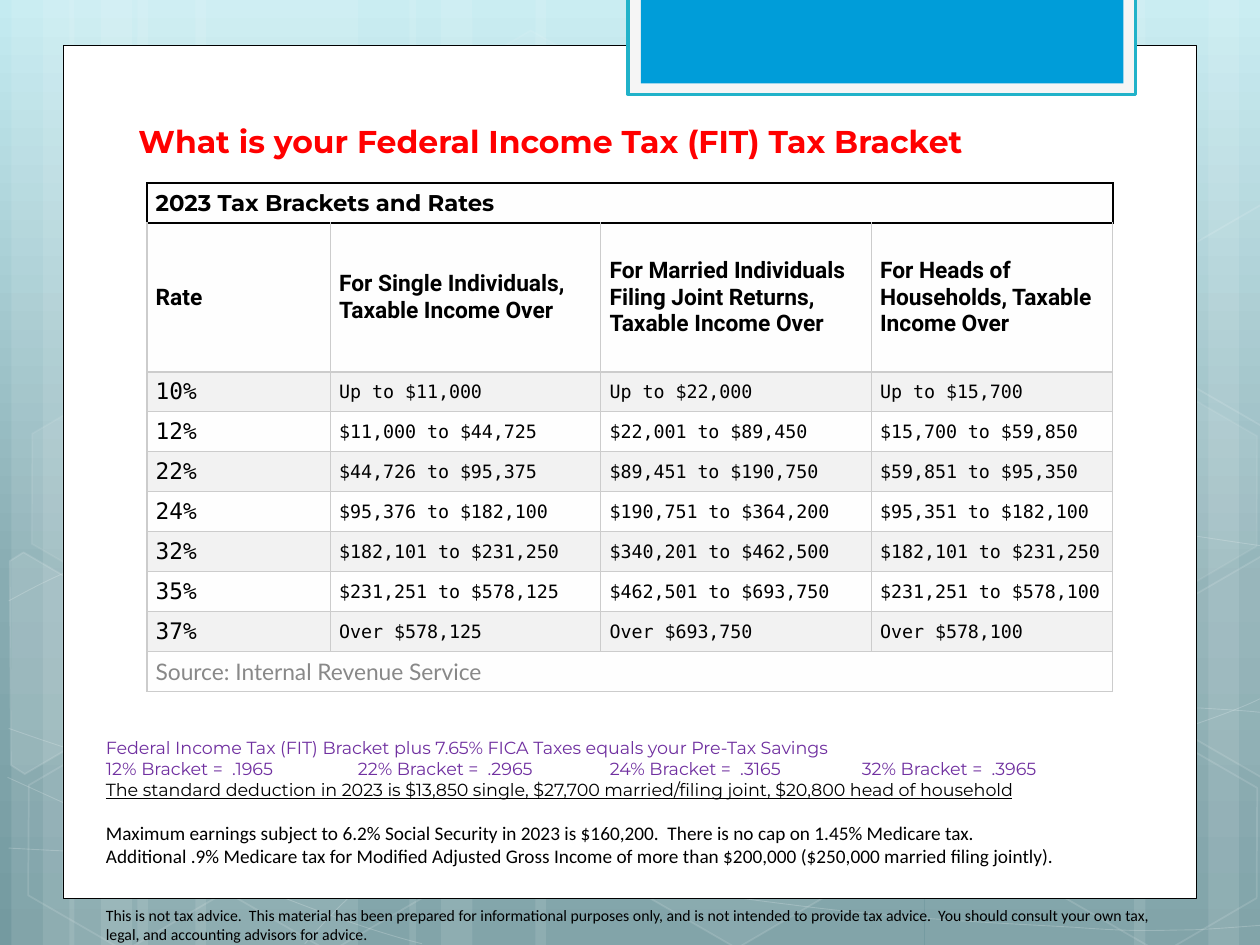
import math
from dataclasses import dataclass

from lxml import etree
from pptx import Presentation
from pptx.dml.color import RGBColor
from pptx.enum import shapes, text
from pptx.oxml import ns
from pptx.util import Pt


@dataclass(frozen=True)
class Theme:
    """Colours, fonts and type sizes of the slide."""
    white: str = "FFFFFF"
    black: str = "000000"
    red: str = "FF0000"
    purple: str = "7030A0"
    grey: str = "888888"
    rule: str = "CCCCCC"
    plain: str = "FEFEFE"
    band: str = "F2F2F2"
    tab_fill: str = "F5F5F5"
    tab_edge: str = "21B2C9"
    accent: str = "009DD9"
    backdrop: tuple = ((0, "C4EBF1"), (62, "88ACB2"), (100, "749AA0"))
    display: str = "Montserrat"
    body: str = "Calibri"
    heading: str = "Roboto"
    figures: str = "DejaVu Sans Mono"
    credit: str = "Lato"
    title_size: float = 18
    table_size: float = 13
    amount_size: float = 10.5
    note_size: float = 10
    limit_size: float = 11
    disclaimer_size: float = 9


THEME = Theme()

STRIPES = [(78.5, 126), (6.5, 36), (24.5, 60), (111.6, 126), (39.6, 36), (57.6, 60),
           (528.5, 126), (690.5, 36), (648, 60), (306, 222), (234, 36), (252, 60)]

CURVES = [
    [(5, 484.6), (43.9, 486.7), (82.8, 488.9), (136.8, 488.2), (190.8, 487.4), (257.8, 486),
     (329.8, 478.8), (401.8, 471.6), (504, 457.9), (570.2, 444.2), (635.8, 430.6),
     (703.4, 409), (725, 396.7)],
    [(5, 343.4), (25.9, 331.9), (46.8, 321.1), (87.1, 310.3), (128.2, 299.5), (186.5, 283.7),
     (249.8, 278.6), (313.9, 273.6), (391.7, 272.9), (470.9, 278.6), (550.1, 284.4),
     (681.8, 306.7), (725, 312.5)],
    [(4.3, 444.2), (91.4, 483.8), (177.8, 523.4), (241.2, 539.3)],
    [(5, 416.2), (27.4, 424.1), (50.4, 432), (92.2, 443.5), (133.9, 454.3), (196.6, 472.3),
     (257, 484.6), (316.8, 496.8), (392.4, 509.8), (452.2, 517), (511.9, 524.9),
     (576, 527.8), (614.2, 529.9), (652.3, 532.8), (661.7, 531.4), (680.4, 531.4),
     (699.1, 530.6), (712.1, 529.2), (725, 528.5)],
    [(174.2, 539.3), (187.2, 524.9), (200.2, 510.5), (217.4, 497.5), (234.7, 483.8),
     (259.2, 470.2), (279.4, 460.1), (299.5, 450), (311.8, 445.7), (337.7, 438.5),
     (364.3, 431.3), (412.6, 421.2), (437.8, 416.2), (463.7, 411.1), (467.3, 411.1),
     (489.6, 409.7), (511.9, 407.5), (547.2, 405.4), (571.7, 404.6), (596.9, 403.9),
     (637.9, 404.6), (637.9, 404.6), (654, 404.6), (670, 404.6), (686.2, 404.6),
     (699.1, 405.4), (711.4, 406.1), (717.8, 406.8), (724.3, 407.5), (722.2, 406.8),
     (724.3, 407.5)]]

HEXAGONS = [(240.5, 26, 4, 8), (357.8, 424, 6, 12), (8, 425.5, 0, 12), (10, 224.6, 7, 8),
            (125.3, 426, 0, 12), (542.2, 326, 10, 12), (600.5, 427, 0, 12), (600.5, 226, 7, 8)]

LEFT_CUT = [(5.8, 320.4), (13.7, 315.4), (69.1, 347.8), (68.4, 410.4), (14.4, 442.1), (6.5, 437)]
RIGHT_CUT = [(666.7, 349.2), (721.4, 317.5), (726.5, 321.1), (726.5, 441.4), (721.4, 444.2),
             (666.7, 412.6)]
UPPER_CUT = [(x, y - 200.9) for x, y in RIGHT_CUT]
CUT_HEXAGONS = [(LEFT_CUT, (25.9, 385.9), 10), (RIGHT_CUT, (709.2, 374.4), 4),
                (UPPER_CUT, (709.2, 173.5), 0)]

HEADINGS = ["Rate", "For Single Individuals, Taxable Income Over",
            "For Married Individuals Filing Joint Returns, Taxable Income Over",
            "For Heads of Households, Taxable Income Over"]
BRACKETS = [
    ("10%", "Up to $11,000", "Up to $22,000", "Up to $15,700"),
    ("12%", "$11,000 to $44,725", "$22,001 to $89,450", "$15,700 to $59,850"),
    ("22%", "$44,726 to $95,375", "$89,451 to $190,750", "$59,851 to $95,350"),
    ("24%", "$95,376 to $182,100", "$190,751 to $364,200", "$95,351 to $182,100"),
    ("32%", "$182,101 to $231,250", "$340,201 to $462,500", "$182,101 to $231,250"),
    ("35%", "$231,251 to $578,125", "$462,501 to $693,750", "$231,251 to $578,100"),
    ("37%", "Over $578,125", "Over $693,750", "Over $578,100")]

NOTES = [
    ("Federal Income Tax (FIT) Bracket plus 7.65% FICA Taxes equals your Pre-Tax Savings",
     THEME.display, THEME.note_size, THEME.purple, False, 0),
    ("12% Bracket =  .1965\t22% Bracket =  .2965\t24% Bracket =  .3165\t32% Bracket =  .3965",
     THEME.display, THEME.note_size, THEME.purple, False, 0),
    ("The standard deduction in 2023 is $13,850 single, $27,700 married/filing joint, "
     "$20,800 head of household", THEME.display, THEME.note_size, THEME.black, True, 0),
    ("Maximum earnings subject to 6.2% Social Security in 2023 is $160,200.  "
     "There is no cap on 1.45% Medicare tax.",
     THEME.body, THEME.limit_size, THEME.black, False, 12.2),
    ("Additional .9% Medicare tax for Modified Adjusted Gross Income of more than $200,000 "
     "($250,000 married filing jointly).", THEME.body, THEME.limit_size, THEME.black, False, 0),
    ("This is not tax advice.  This material has been prepared for informational purposes only, "
     "and is not intended to provide tax advice.  You should consult your own tax, legal, and "
     "accounting advisors for advice.",
     THEME.body, THEME.disclaimer_size, THEME.black, False, 22)]


def add_child(parent, tag, **attributes):
    """Append a drawing element to a parent."""
    return etree.SubElement(parent, ns.qn(tag), {k: str(v) for k, v in attributes.items()})


def paint(form, color, opacity=100):
    """Set a solid colour, or none at zero opacity."""
    if not opacity:
        form.background()
        return
    form.solid()
    form.fore_color.rgb = RGBColor.from_string(color)


def style(shape, fill=None, line=None, weight=1, fill_opacity=100, line_opacity=100):
    """Give a shape its fill and outline, without a shadow."""
    shape.shadow.inherit = False
    for form, color, opacity, tag in ((shape.fill, fill, fill_opacity, "./p:spPr/a:solidFill"),
                                      (shape.line.fill, line, line_opacity, ".//a:ln/a:solidFill")):
        paint(form, color, opacity if color else 0)
        if color and 0 < opacity < 100:
            add_child(shape.element.xpath(tag + "/a:srgbClr")[0], "a:alpha", val=opacity * 1000)
    if line:
        shape.line.width = Pt(weight)


def write(paragraph, words, font, size, color, bold=False, underline=False):
    """Add one formatted run to a paragraph."""
    run = paragraph.add_run()
    run.text = words
    run.font.name, run.font.size = font, Pt(size)
    run.font.bold, run.font.underline = bold, underline
    run.font.color.rgb = RGBColor.from_string(color)


def add_box(container, kind, left, top, width, height, **look):
    """Add a styled preset shape."""
    shape = container.add_shape(kind, Pt(left), Pt(top), Pt(width), Pt(height))
    style(shape, **look)
    return shape


def add_outline(container, points, closed):
    """Add a freeform through the given points."""
    points = [(Pt(x), Pt(y)) for x, y in points]
    builder = container.build_freeform(*points[0])
    builder.add_line_segments(points[1:], close=closed)
    return builder.convert_to_shape()


def add_curve(container, points):
    """Add an open line of cubic curves, three points to a segment."""
    shape = add_outline(container, points, False)
    segments = shape.element.xpath(".//a:lnTo")
    for first in range(0, len(segments), 3):
        curve = etree.Element(ns.qn("a:cubicBezTo"))
        segments[first].addprevious(curve)
        for segment in segments[first:first + 3]:
            curve.append(segment[0])
            segment.getparent().remove(segment)
    style(shape, line=THEME.white, weight=0.5, line_opacity=20)


def add_cut_hexagon(container, points, center, opacity, angle=30):
    """Add a clipped hexagon, turned about its centre."""
    cos, sin = math.cos(math.radians(angle)), math.sin(math.radians(angle))
    offsets = [(x - center[0], y - center[1]) for x, y in points]
    upright = [(center[0] + x * cos + y * sin, center[1] - x * sin + y * cos) for x, y in offsets]
    shape = add_outline(container, upright, True)
    shape.rotation = angle
    style(shape, THEME.white, THEME.white, 1, opacity, 12)


def add_backdrop(slide, left, top, width, height):
    """Draw the gradient, stripes, curves and hexagons behind the page."""
    fill = slide.background.fill
    fill.gradient()
    fill.gradient_angle = 270
    stops = slide.element.xpath(".//p:bg//a:gsLst")[0]
    for stop in list(stops):
        stops.remove(stop)
    for position, color in THEME.backdrop:
        add_child(add_child(stops, "a:gs", pos=position * 1000), "a:srgbClr", val=color)
    group = slide.shapes.add_group_shape()
    for x, stripe_width in STRIPES:
        add_box(group.shapes, shapes.MSO_SHAPE.RECTANGLE, left + x, top, stripe_width, height,
                fill=THEME.white, fill_opacity=10)
    for points in CURVES:
        add_curve(group.shapes, [(left + x, top + y) for x, y in points])
    for x, y, fill_opacity, line_opacity in HEXAGONS:
        hexagon = add_box(group.shapes, shapes.MSO_SHAPE.HEXAGON, left + x, top + y, 126, 109.4,
                          fill=THEME.white, line=THEME.white, fill_opacity=fill_opacity,
                          line_opacity=line_opacity)
        hexagon.adjustments[0] = 0.285
        hexagon.rotation = 30
    for points, center, opacity in CUT_HEXAGONS:
        add_cut_hexagon(group.shapes, [(left + x, top + y) for x, y in points],
                        (left + center[0], top + center[1]), opacity)


def add_page(slide, left, top, width, height):
    """Draw the white page and the blue tab hanging over its top edge."""
    kind = shapes.MSO_SHAPE.RECTANGLE
    add_box(slide.shapes, kind, left, top, width, height,
            fill=THEME.white, line=THEME.black, weight=0.5)
    add_box(slide.shapes, kind, left + 323, top - 27.4, 289.8, 55.4,
            fill=THEME.tab_fill, line=THEME.tab_edge, weight=2)
    add_box(slide.shapes, kind, left + 330.2, top - 27.4, 275.8, 49, fill=THEME.accent)


def add_title(slide, left, top, width, height):
    """Write the slide title."""
    frame = slide.shapes.add_textbox(Pt(left), Pt(top), Pt(width), Pt(height)).text_frame
    frame.word_wrap = True
    write(frame.paragraphs[0], "What is your Federal Income Tax (FIT) Tax Bracket",
          THEME.display, THEME.title_size, THEME.red, bold=True)


def fill_cell(cell, words, fill, edges, font, size, color=THEME.black, bold=False):
    """Write a table cell and set its fill, margins and four borders."""
    cell.vertical_anchor = text.MSO_ANCHOR.MIDDLE
    cell.margin_left = cell.margin_right = Pt(5)
    cell.margin_top = cell.margin_bottom = Pt(2)
    paint(cell.fill, fill)
    if words:
        write(cell.text_frame.paragraphs[0], words, font, size, color, bold)
    properties = cell._tc.get_or_add_tcPr()
    for index, (side, edge) in enumerate(zip("LRTB", edges)):
        line = etree.Element(ns.qn("a:ln" + side), w=str(Pt(1 if edge == THEME.black else 0.75)))
        add_child(add_child(line, "a:solidFill"), "a:srgbClr", val=edge)
        properties.insert(index, line)


def add_bracket_table(slide, left, top, width, height):
    """Build the table of tax brackets."""
    rows = [("2023 Tax Brackets and Rates", "", "", ""), HEADINGS, *BRACKETS,
            ("Source: Internal Revenue Service", "", "", "")]
    last = len(rows) - 1
    table = slide.shapes.add_table(len(rows), 4, Pt(left), Pt(top), Pt(width), Pt(height)).table
    table.first_row = table.horz_banding = False
    for column, share in zip(table.columns, (0.19, 0.28, 0.28, 0.25)):
        column.width = Pt(width * share)
    heading_height = 85.2
    for index, row in enumerate(table.rows):
        row.height = Pt(heading_height if index == 1 else (height - heading_height) / last)
    for r, row in enumerate(rows):
        fill = THEME.band if 1 < r < last and r % 2 == 0 else THEME.plain
        edges = [THEME.black if r == 0 else THEME.rule] * 4
        if r == 1:
            edges[2] = THEME.black
        for c, words in enumerate(row):
            look = {0: (THEME.display, THEME.table_size, THEME.black, True),
                    1: (THEME.heading, THEME.table_size, THEME.black, True),
                    last: (THEME.credit, THEME.table_size, THEME.grey)}.get(
                        r, (THEME.figures, THEME.amount_size if c else THEME.table_size))
            fill_cell(table.cell(r, c), words, fill, edges, *look)
    for r in (0, last):
        table.cell(r, 0).merge(table.cell(r, 3))


def add_notes(slide, left, top, width, height):
    """Write the savings, limits and disclaimer lines below the table."""
    frame = slide.shapes.add_textbox(Pt(left), Pt(top), Pt(width), Pt(height)).text_frame
    frame.word_wrap = True
    frame.margin_left, frame.margin_top = Pt(13), Pt(15.8)
    for index, (words, font, size, color, underline, gap) in enumerate(NOTES):
        paragraph = frame.add_paragraph() if index else frame.paragraphs[0]
        paragraph.space_before = Pt(gap)
        if "\t" in words:
            tabs = add_child(paragraph._p.get_or_add_pPr(), "a:tabLst")
            for stop in (1, 2, 3):
                add_child(tabs, "a:tab", pos=Pt(144 * stop), algn="l")
        write(paragraph, words, font, size, color, underline=underline)


def main():
    """Build the slide and save it."""
    presentation = Presentation()
    presentation.slide_width, presentation.slide_height = Pt(720), Pt(540)
    slide = presentation.slides.add_slide(presentation.slide_layouts[6])
    add_backdrop(slide, 0, 0, 720, 540)
    add_page(slide, 36, 26, 648, 487.4)
    add_title(slide, 72, 66.2, 545.8, 29)
    add_bracket_table(slide, 84, 104.5, 552, 291)
    add_notes(slide, 47.5, 405.4, 625.7, 138)
    presentation.save("out.pptx")


if __name__ == "__main__":
    main()
